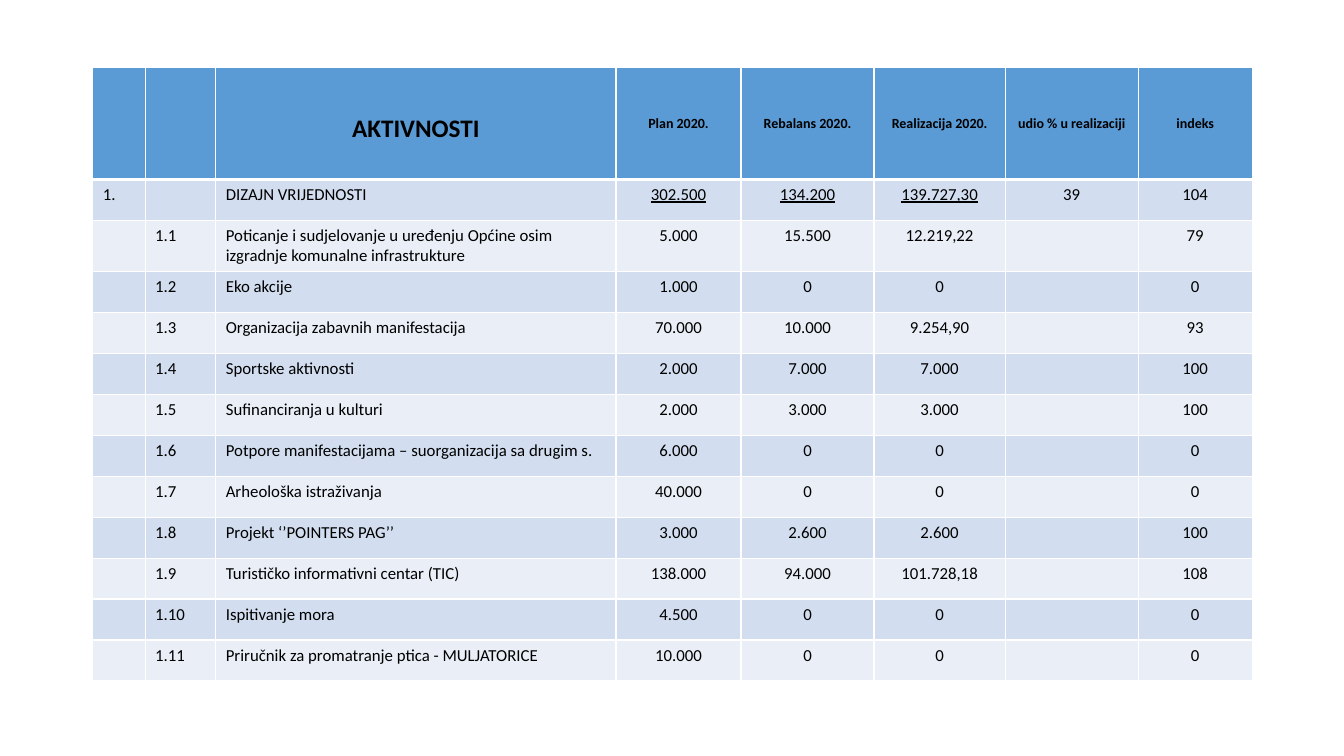
"""Build a slide with the table of planned and realised activities for 2020."""
from lxml.etree import SubElement
from pptx import Presentation
from pptx.dml.color import RGBColor
from pptx.enum.text import MSO_ANCHOR as Anchor, PP_ALIGN as Align
from pptx.oxml.ns import qn
from pptx.util import Inches, Pt

HEADERS = ["", "", "AKTIVNOSTI", "Plan 2020.", "Rebalans 2020.",
           "Realizacija 2020.", "udio % u realizaciji", "indeks"]
ACTIVITIES = [
    ("1.", "", "DIZAJN VRIJEDNOSTI", "302.500", "134.200", "139.727,30", "39", "104"),
    ("", "1.1", "Poticanje i sudjelovanje u uređenju Općine osim izgradnje komunalne infrastrukture",
     "5.000", "15.500", "12.219,22", "", "79"),
    ("", "1.2", "Eko akcije", "1.000", "0", "0", "", "0"),
    ("", "1.3", "Organizacija zabavnih manifestacija", "70.000", "10.000", "9.254,90", "", "93"),
    ("", "1.4", "Sportske aktivnosti", "2.000", "7.000", "7.000", "", "100"),
    ("", "1.5", "Sufinanciranja u kulturi", "2.000", "3.000", "3.000", "", "100"),
    ("", "1.6", "Potpore manifestacijama – suorganizacija sa drugim s.", "6.000", "0", "0", "", "0"),
    ("", "1.7", "Arheološka istraživanja", "40.000", "0", "0", "", "0"),
    ("", "1.8", "Projekt ‘’POINTERS PAG’’", "3.000", "2.600", "2.600", "", "100"),
    ("", "1.9", "Turističko informativni centar (TIC)", "138.000", "94.000", "101.728,18", "", "108"),
    ("", "1.10", "Ispitivanje mora", "4.500", "0", "0", "", "0"),
    ("", "1.11", "Priručnik za promatranje ptica - MULJATORICE", "10.000", "0", "0", "", "0"),
]
COLUMN_WIDTHS = [0.52, 0.7, 3.97, 1.24, 1.32, 1.3, 1.32, 1.13]
LEFT, TOP, WIDTH, HEIGHT = 0.92, 0.67, 11.5, 6.08
HEADER_HEIGHT, TWO_LINE_HEIGHT, TWO_LINE_ROW = 1.11, 0.5, 2
TITLE_COLUMN, FIRST_VALUE_COLUMN = 2, 3
UNDERLINED_COLUMNS = (3, 4, 5)

FONT = "Calibri"
BLACK = RGBColor(0x00, 0x00, 0x00)
WHITE = RGBColor(0xFF, 0xFF, 0xFF)
HEADER_BLUE = RGBColor(0x5B, 0x9B, 0xD5)
BANDS = (RGBColor(0xEA, 0xEF, 0xF7), RGBColor(0xD2, 0xDE, 0xEF))


def set_borders(cell, top, bottom):
    properties = cell._tc.get_or_add_tcPr()
    for tag, points in (("a:lnL", 1), ("a:lnR", 1), ("a:lnT", top), ("a:lnB", bottom)):
        line = SubElement(properties, qn(tag), w=str(Pt(points)))
        fill = SubElement(line, qn("a:solidFill"))
        SubElement(fill, qn("a:srgbClr"), val=str(WHITE))


def write(cell, text, size, bold=False, underline=False, centred=False):
    paragraph = cell.text_frame.paragraphs[0]
    if centred:
        paragraph.alignment = Align.CENTER
    if text:
        run = paragraph.add_run()
        run.text = text
        run.font.name = FONT
        run.font.size = Pt(size)
        run.font.bold = bold
        run.font.underline = underline
        run.font.color.rgb = BLACK


def fill_header(cell, column, text):
    set_borders(cell, 1, 3)
    cell.fill.solid()
    cell.fill.fore_color.rgb = HEADER_BLUE
    if column == TITLE_COLUMN:
        cell.margin_top = Inches(0.46)
    elif column >= FIRST_VALUE_COLUMN:
        cell.vertical_anchor = Anchor.MIDDLE
        cell.margin_left = cell.margin_right = cell.margin_top = Inches(0.01)
        cell.margin_bottom = 0
    write(cell, text, 18 if column == TITLE_COLUMN else 10, bold=True, centred=True)


def fill_activity(cell, row, column, text):
    set_borders(cell, 3 if row == 1 else 1, 1)
    cell.fill.solid()
    cell.fill.fore_color.rgb = BANDS[row % 2]
    write(cell, text, 12, underline=row == 1 and column in UNDERLINED_COLUMNS,
          centred=column >= FIRST_VALUE_COLUMN)


def main():
    presentation = Presentation()
    presentation.slide_width = Inches(13.33)
    presentation.slide_height = Inches(7.5)
    slide = presentation.slides.add_slide(presentation.slide_layouts[6])
    table = slide.shapes.add_table(
        len(ACTIVITIES) + 1, len(HEADERS),
        Inches(LEFT), Inches(TOP), Inches(WIDTH), Inches(HEIGHT)).table

    for column, width in zip(table.columns, COLUMN_WIDTHS):
        column.width = Inches(width)
    row_height = (HEIGHT - HEADER_HEIGHT - TWO_LINE_HEIGHT) / (len(ACTIVITIES) - 1)
    special_heights = {0: HEADER_HEIGHT, TWO_LINE_ROW: TWO_LINE_HEIGHT}
    for index, row in enumerate(table.rows):
        row.height = Inches(special_heights.get(index, row_height))

    for column, text in enumerate(HEADERS):
        fill_header(table.cell(0, column), column, text)
    for row, activity in enumerate(ACTIVITIES, start=1):
        for column, text in enumerate(activity):
            fill_activity(table.cell(row, column), row, column, text)
    presentation.save("out.pptx")


if __name__ == "__main__":
    main()
